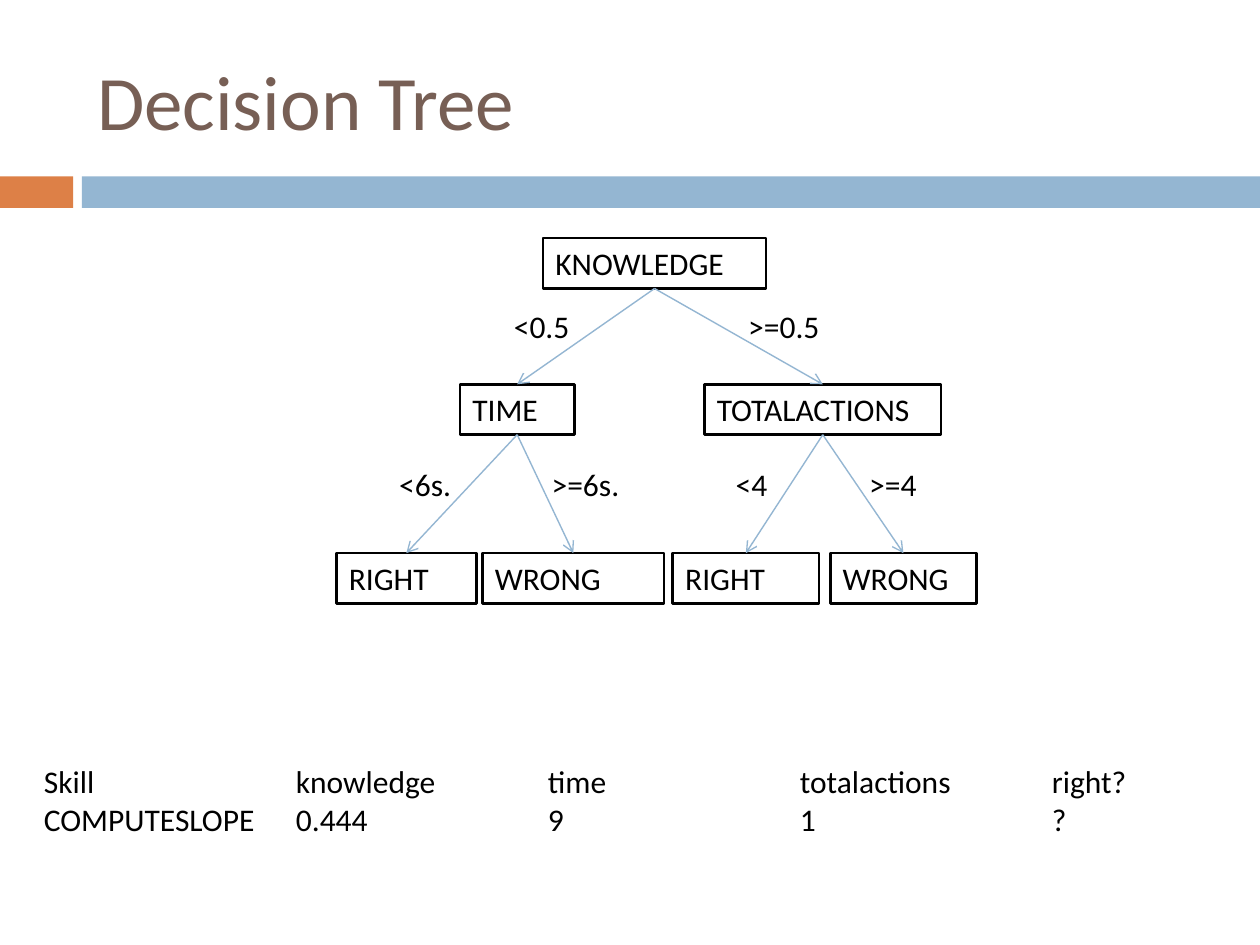
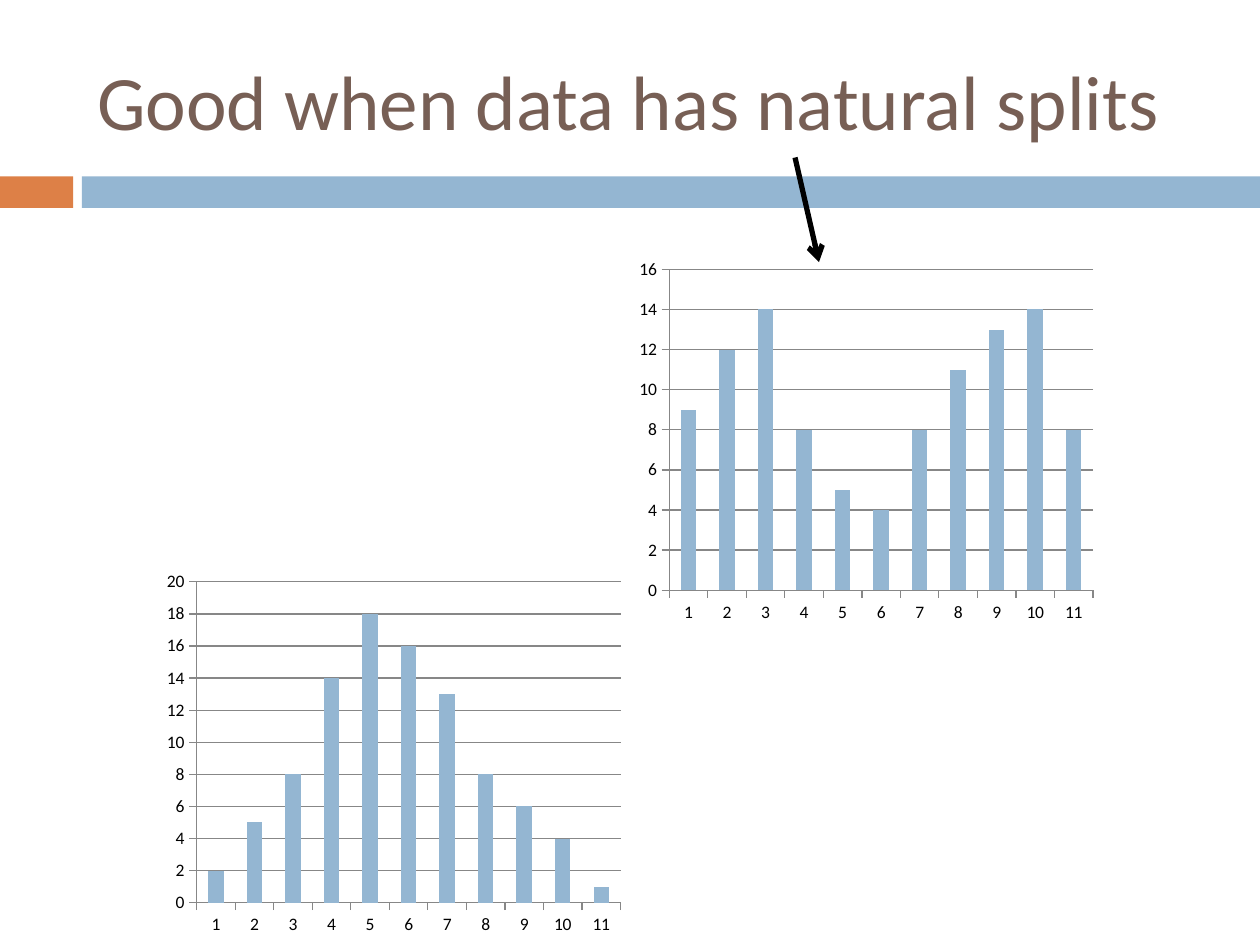
from lxml import etree
from pptx import Presentation
from pptx import util as u
from pptx.chart.data import CategoryChartData
from pptx.dml.color import RGBColor
from pptx.enum import chart as ch, shapes, text
from pptx.oxml.ns import qn

PX = 9144  # EMU; 100 px to the inch
FONT = "Calibri"
BLACK, WHITE, GREY = "000000", "FFFFFF", "878787"
BROWN, ORANGE, BLUE = "775F55", "DD8047", "94B6D2"


def rgb(value):
    return RGBColor.from_string(value)


def px(*values):
    return [u.Emu(v * PX) for v in values]


class Deck:
    def __init__(self):
        self.prs = Presentation()
        self.prs.slide_width, self.prs.slide_height = px(1000, 750)
        self.s = None

    def slide(self, title):
        """Start a slide with the shared bands and title."""
        self.s = self.prs.slides.add_slide(self.prs.slide_layouts[5])
        self.rect(0, 140, 58, 25, ORANGE)
        self.rect(65, 140, 935, 25, BLUE)
        sp = self.s.shapes.title
        sp.left, sp.top, sp.width, sp.height = px(67, 25, 892, 108)
        tf = sp.text_frame
        tf.text = title
        tf.word_wrap = True
        tf.auto_size = text.MSO_AUTO_SIZE.NONE
        tf.vertical_anchor = text.MSO_ANCHOR.MIDDLE
        self.style(tf.paragraphs[0], 44, BROWN)

    def style(self, p, size=18, color=BLACK):
        p.alignment = text.PP_ALIGN.LEFT
        self.font(p.font, size, color)

    def font(self, font, size, color):
        font.name, font.size = FONT, u.Pt(size)
        font.color.rgb = rgb(color)

    def rect(self, x, y, w, h, fill, line=None):
        sp = self.s.shapes.add_shape(shapes.MSO_SHAPE.RECTANGLE, *px(x, y, w, h))
        sp.shadow.inherit = False
        sp.fill.solid()
        sp.fill.fore_color.rgb = rgb(fill)
        if line:
            sp.line.color.rgb = rgb(line)
            sp.line.width = u.Pt(1.5)
        else:
            sp.line.fill.background()
        return sp

    def set_text(self, sp, lines, tab=None):
        """Fill a shape with lines; tab is the step between tab stops."""
        tf = sp.text_frame
        tf.word_wrap = True
        tf.auto_size = text.MSO_AUTO_SIZE.SHAPE_TO_FIT_TEXT
        tf.vertical_anchor = text.MSO_ANCHOR.TOP
        tf.text = "\n".join(lines)
        for p in tf.paragraphs:
            if tab:
                stops = etree.SubElement(p._p.get_or_add_pPr(), qn("a:tabLst"))
                for i in range(1, lines[0].count("\t") + 1):
                    etree.SubElement(stops, qn("a:tab"), pos=str(i * tab * PX), algn="l")
            self.style(p)

    def node(self, x, y, w, label):
        sp = self.rect(x, y, w, 40, WHITE, BLACK)
        self.set_text(sp, [label])
        return sp

    def label(self, x, y, w, h, *lines, tab=None):
        self.set_text(self.s.shapes.add_textbox(*px(x, y, w, h)), lines, tab)

    def arrow(self, x1, y1, x2, y2, color, width):
        c = self.s.shapes.add_connector(shapes.MSO_CONNECTOR.STRAIGHT, *px(x1, y1, x2, y2))
        c.line.color.rgb = rgb(color)
        c.line.width = u.Pt(width)
        etree.SubElement(c.line._get_or_add_ln(), qn("a:tailEnd"), type="arrow")
        etree.SubElement(c._element.spPr, qn("a:effectLst"))
        return c

    def branch(self, parent, child):
        """Arrow from the bottom of parent to the top of child."""
        c = self.arrow(0, 0, 0, 0, BLUE, 0.79)
        c.begin_connect(parent, 2)
        c.end_connect(child, 0)

    def columns(self, x, y, w, h, values, top):
        data = CategoryChartData()
        data.categories = [str(i) for i in range(1, len(values) + 1)]
        data.add_series("Series 1", values)
        chart = self.s.shapes.add_chart(
            ch.XL_CHART_TYPE.COLUMN_CLUSTERED, *px(x, y, w, h), data).chart
        chart.has_title = chart.has_legend = False
        self.font(chart.font, 10, BLACK)
        plot = chart.plots[0]
        plot.vary_by_categories = False
        plot.gap_width = 150
        fill = plot.series[0].format.fill
        fill.solid()
        fill.fore_color.rgb = rgb(BLUE)
        axis = chart.value_axis
        axis.minimum_scale, axis.maximum_scale, axis.major_unit = 0, top, 2
        axis.has_major_gridlines = True
        for part in (axis, chart.category_axis, axis.major_gridlines):
            part.format.line.color.rgb = rgb(GREY)
            part.format.line.width = u.Pt(0.75)
        for part in (axis, chart.category_axis):
            part.major_tick_mark = ch.XL_TICK_MARK.OUTSIDE


def decision_tree(d):
    d.slide("Decision Tree")
    d.label(25, 600, 958, 71,
            "Skill\tknowledge\ttime\ttotalactions\tright?",
            "COMPUTESLOPE\t0.444\t9\t1\t?", tab=200)

    knowledge = d.node(431, 189, 177, "KNOWLEDGE")
    time = d.node(365, 305, 91, "TIME")
    actions = d.node(559, 305, 188, "TOTALACTIONS")
    time_right = d.node(267, 439, 111, "RIGHT")
    actions_right = d.node(534, 439, 116, "RIGHT")
    time_wrong = d.node(383, 439, 144, "WRONG")
    actions_wrong = d.node(659, 439, 116, "WRONG")

    for parent, children in ((knowledge, (time, actions)),
                             (time, (time_right, time_wrong)),
                             (actions, (actions_right, actions_wrong))):
        for child in children:
            d.branch(parent, child)

    for x, y, w, condition in ((398, 239, 106, "<0.5"), (584, 239, 106, ">=0.5"),
                               (307, 364, 69, "<6s."), (428, 364, 94, ">=6s."),
                               (574, 364, 69, "<4"), (680, 364, 69, ">=4")):
        d.label(x, y, w, 40, condition)


def natural_splits(d):
    d.slide("Good when data has natural splits")
    d.columns(125, 448, 375, 300, (2, 5, 8, 14, 18, 16, 13, 8, 6, 4, 1), 20)
    d.columns(500, 200, 375, 300, (9, 12, 14, 8, 5, 4, 8, 11, 13, 14, 8), 16)
    d.arrow(631, 125, 650, 208, BLACK, 3)


def main():
    d = Deck()
    decision_tree(d)
    natural_splits(d)
    d.prs.save("out.pptx")


if __name__ == "__main__":
    main()
